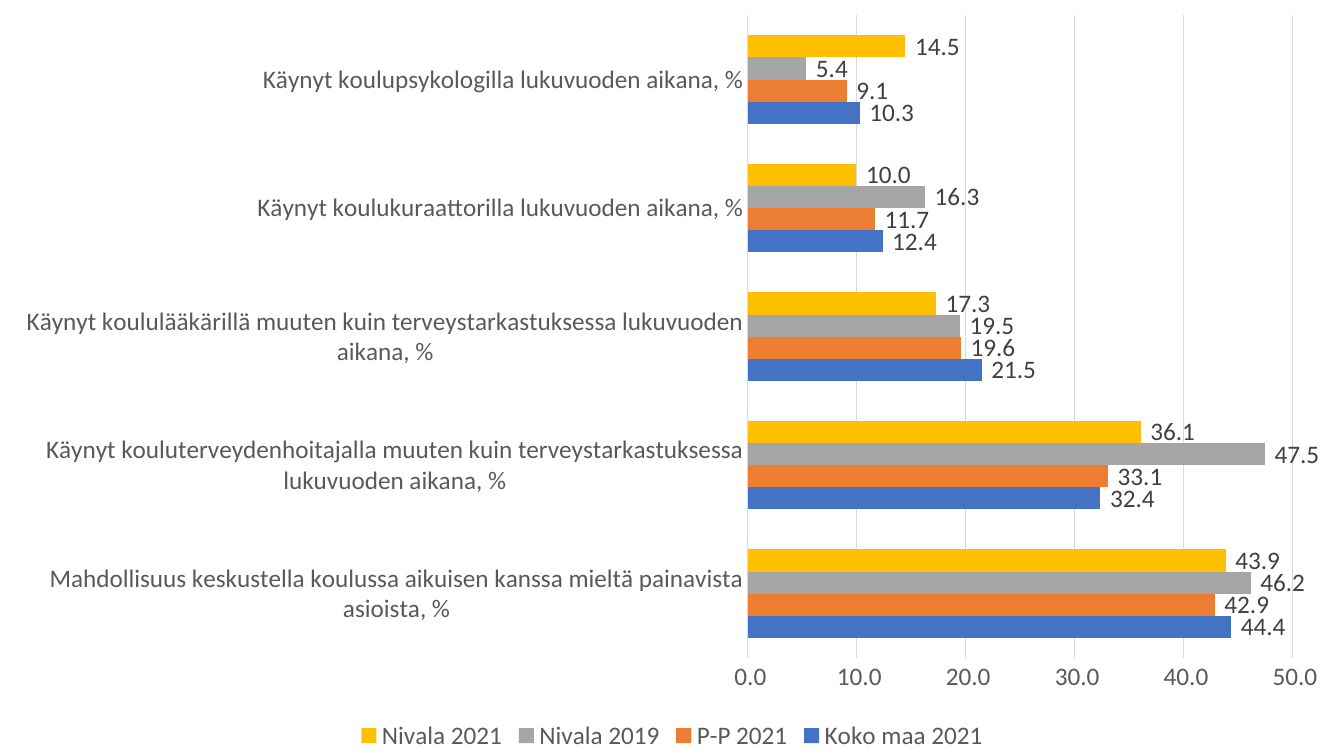
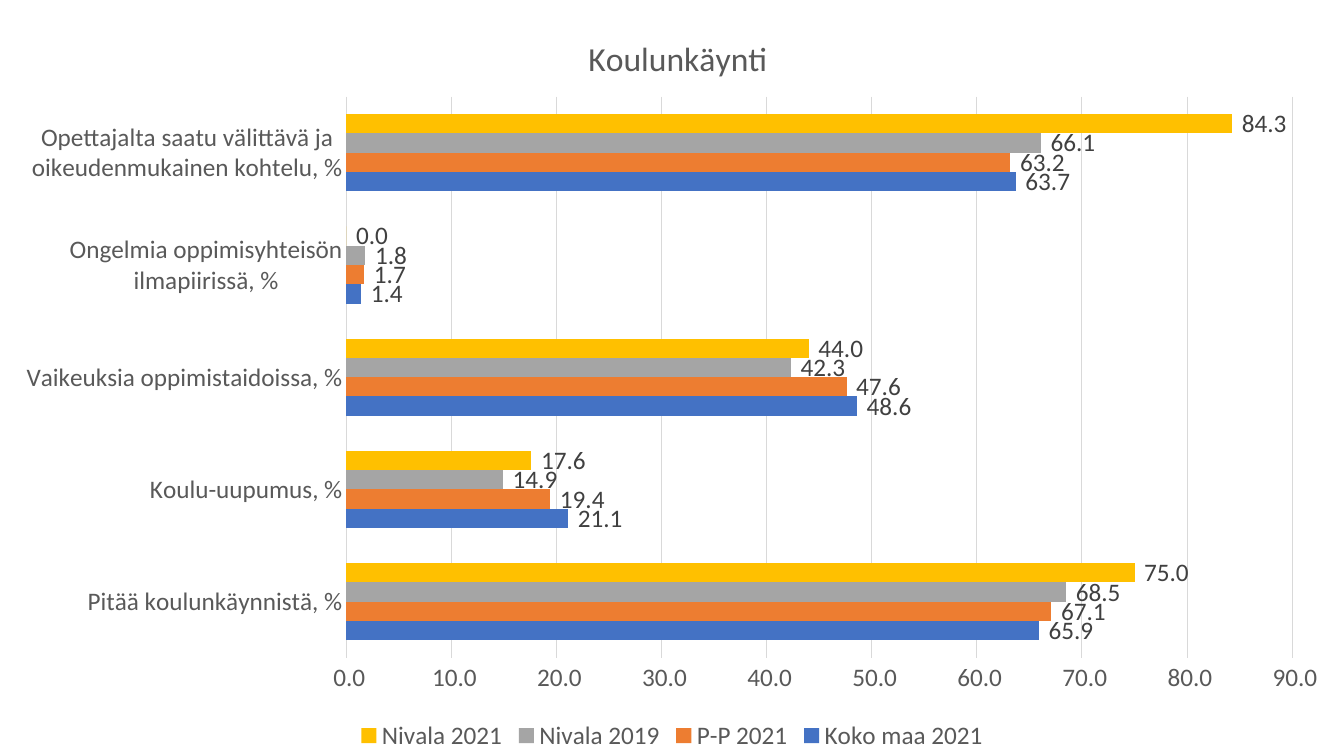
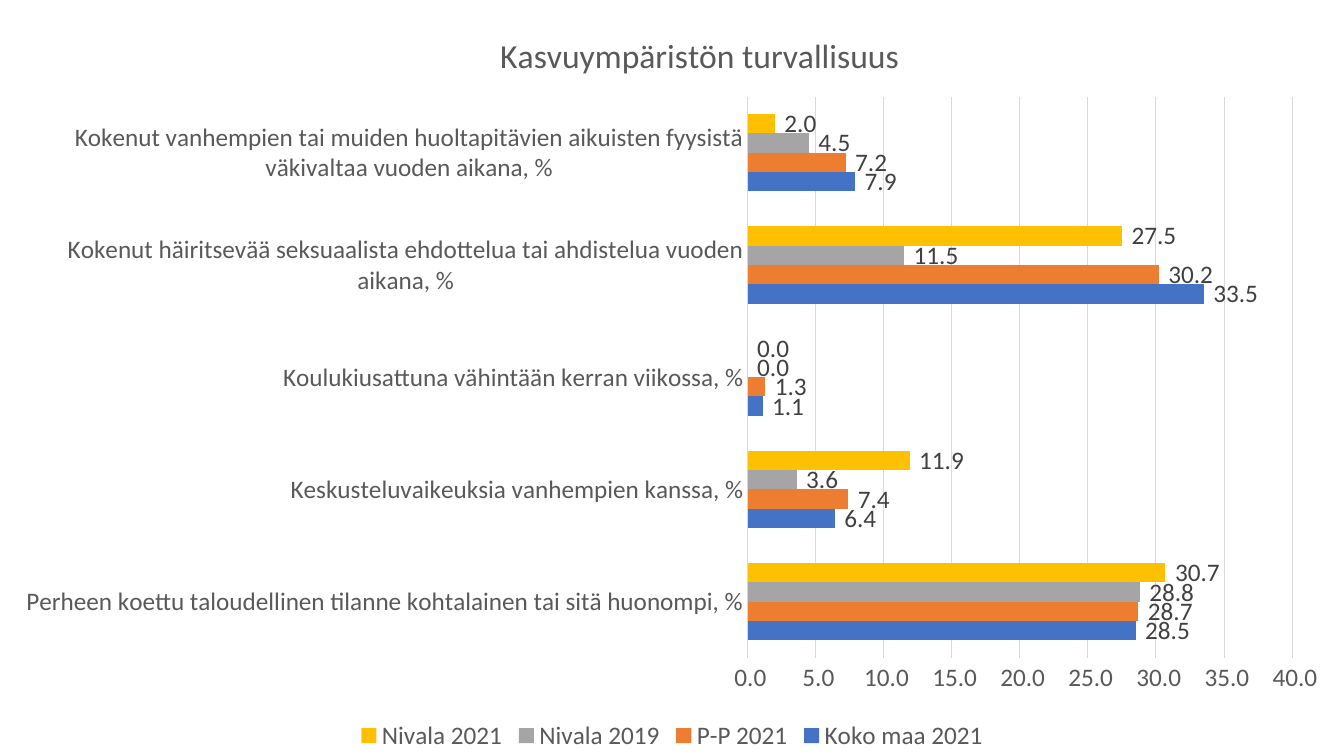
from lxml import etree
from pptx import Presentation
from pptx.chart import data as chart_data
from pptx.dml.color import RGBColor
from pptx.enum import chart as ce
from pptx.oxml import ns
from pptx.util import Pt

WIDTH, HEIGHT = 960, 540
PLOT_RIGHT, PLOT_BOTTOM = 923, 470
FONT = "Calibri"
NUMBER_FORMAT = r"#\ ##0.0"
BODY_SIZE, TITLE_SIZE = 18, 24
TEXT_GRAY = RGBColor(0x59, 0x59, 0x59)
LABEL_GRAY = RGBColor(0x40, 0x40, 0x40)
LINE_GRAY = RGBColor(0xD9, 0xD9, 0xD9)
SERIES_COLORS = {
    "Koko maa 2021": RGBColor(0x44, 0x72, 0xC4),
    "P-P 2021": RGBColor(0xED, 0x7D, 0x31),
    "Nivala 2019": RGBColor(0xA5, 0xA5, 0xA5),
    "Nivala 2021": RGBColor(0xFF, 0xC0, 0x00),
}

CHARTS = [
    {
        "title": None,
        "plot_corner": (534, 11),
        "scale": (50, 10),
        "rows": [
            ("Mahdollisuus keskustella koulussa aikuisen kanssa mieltä painavista asioista, %",
             (44.4, 42.9, 46.2, 43.9)),
            ("Käynyt kouluterveydenhoitajalla muuten kuin terveystarkastuksessa lukuvuoden aikana, %",
             (32.4, 33.1, 47.5, 36.1)),
            ("Käynyt koululääkärillä muuten kuin terveystarkastuksessa lukuvuoden aikana, %",
             (21.5, 19.6, 19.5, 17.3)),
            ("Käynyt koulukuraattorilla lukuvuoden aikana, %", (12.4, 11.7, 16.3, 10)),
            ("Käynyt koulupsykologilla lukuvuoden aikana, %", (10.3, 9.1, 5.4, 14.5)),
        ],
    },
    {
        "title": "Koulunkäynti",
        "title_corner": (416, 21.5),
        "plot_corner": (247.5, 69),
        "scale": (90, 10),
        "rows": [
            ("Pitää koulunkäynnistä, %", (65.9, 67.1, 68.5, 75)),
            ("Koulu-uupumus, %", (21.1, 19.4, 14.9, 17.6)),
            ("Vaikeuksia oppimistaidoissa, %", (48.6, 47.6, 42.3, 44)),
            ("Ongelmia oppimisyhteisön ilmapiirissä, %", (1.4, 1.7, 1.8, 0)),
            ("Opettajalta saatu välittävä ja oikeudenmukainen kohtelu, %",
             (63.7, 63.2, 66.1, 84.3)),
        ],
    },
    {
        "title": "Kasvuympäristön turvallisuus",
        "title_corner": (353, 19.5),
        "plot_corner": (534, 69),
        "scale": (40, 5),
        "rows": [
            ("Perheen koettu taloudellinen tilanne kohtalainen tai sitä huonompi, %",
             (28.5, 28.7, 28.8, 30.7)),
            ("Keskusteluvaikeuksia vanhempien kanssa, %", (6.4, 7.4, 3.6, 11.9)),
            ("Koulukiusattuna vähintään kerran viikossa, %", (1.1, 1.3, 0, 0)),
            ("Kokenut häiritsevää seksuaalista ehdottelua tai ahdistelua vuoden aikana, %",
             (33.5, 30.2, 11.5, 27.5)),
            ("Kokenut vanhempien tai muiden huoltapitävien aikuisten fyysistä väkivaltaa vuoden aikana, %",
             (7.9, 7.2, 4.5, 2)),
        ],
    },
]


def set_font(font, size=BODY_SIZE, color=TEXT_GRAY):
    font.name = FONT
    font.size = Pt(size)
    font.bold = False
    font.color.rgb = color


def set_line(line):
    line.color.rgb = LINE_GRAY
    line.width = Pt(0.75)


def place(element, index, left, top, width=None, height=None):
    for old_layout in element.findall(ns.qn("c:layout")):
        element.remove(old_layout)
    layout = etree.Element(ns.qn("c:layout"))
    manual = etree.SubElement(layout, ns.qn("c:manualLayout"))
    settings = [("xMode", "edge"), ("yMode", "edge"),
                ("x", left / WIDTH), ("y", top / HEIGHT)]
    if width is not None:
        settings.insert(0, ("layoutTarget", "inner"))
        settings += [("w", width / WIDTH), ("h", height / HEIGHT)]
    for tag, value in settings:
        etree.SubElement(manual, ns.qn(f"c:{tag}")).set("val", str(value))
    element.insert(index, layout)


def format_axes(chart, maximum, step):
    category_axis, value_axis = chart.category_axis, chart.value_axis
    for axis in (category_axis, value_axis):
        axis.major_tick_mark = ce.XL_TICK_MARK.NONE
        axis.minor_tick_mark = ce.XL_TICK_MARK.NONE
        set_font(axis.tick_labels.font)
    category_axis.has_major_gridlines = False
    set_line(category_axis.format.line)
    value_axis.minimum_scale = 0
    value_axis.maximum_scale = maximum
    value_axis.major_unit = step
    value_axis.tick_labels.number_format = NUMBER_FORMAT
    value_axis.tick_labels.number_format_is_linked = False
    value_axis.format.line.fill.background()
    value_axis.has_major_gridlines = True
    set_line(value_axis.major_gridlines.format.line)


def format_bars(plot):
    plot.gap_width = 182
    plot.overlap = 0
    plot.vary_by_categories = False
    for series in plot.series:
        series.format.fill.solid()
        series.format.fill.fore_color.rgb = SERIES_COLORS[series.name]
        series.invert_if_negative = False
        labels = series.data_labels
        labels.show_value = True
        labels.position = ce.XL_LABEL_POSITION.OUTSIDE_END
        labels.number_format = NUMBER_FORMAT
        labels.number_format_is_linked = False
        set_font(labels.font, color=LABEL_GRAY)


def add_title(chart, title, corner):
    chart.has_title = True
    paragraph = chart.chart_title.text_frame.paragraphs[0]
    run = paragraph.add_run()
    run.text = title
    set_font(run.font, TITLE_SIZE)
    chart.chart_title.include_in_layout = False
    place(chart.chart_title._element, 1, *corner)


def add_bar_chart(slide, content):
    source = chart_data.CategoryChartData(number_format=NUMBER_FORMAT)
    source.categories = [category for category, _ in content["rows"]]
    columns = zip(*(values for _, values in content["rows"]))
    for name, values in zip(SERIES_COLORS, columns):
        source.add_series(name, values)
    chart = slide.shapes.add_chart(
        ce.XL_CHART_TYPE.BAR_CLUSTERED, 0, 0, Pt(WIDTH), Pt(HEIGHT), source).chart
    set_font(chart.font)
    format_axes(chart, *content["scale"])
    format_bars(chart.plots[0])
    chart.has_legend = True
    chart.legend.position = ce.XL_LEGEND_POSITION.BOTTOM
    chart.legend.include_in_layout = False
    set_font(chart.legend.font)
    if content["title"]:
        add_title(chart, content["title"], content["title_corner"])
    else:
        chart.has_title = False
    left, top = content["plot_corner"]
    plot_area = chart._chartSpace.chart.plotArea
    place(plot_area, 0, left, top, PLOT_RIGHT - left, PLOT_BOTTOM - top)


def main():
    presentation = Presentation()
    presentation.slide_width = Pt(WIDTH)
    presentation.slide_height = Pt(HEIGHT)
    blank_layout = presentation.slide_layouts.get_by_name("Blank")
    for content in CHARTS:
        add_bar_chart(presentation.slides.add_slide(blank_layout), content)
    presentation.save("out.pptx")


if __name__ == "__main__":
    main()
